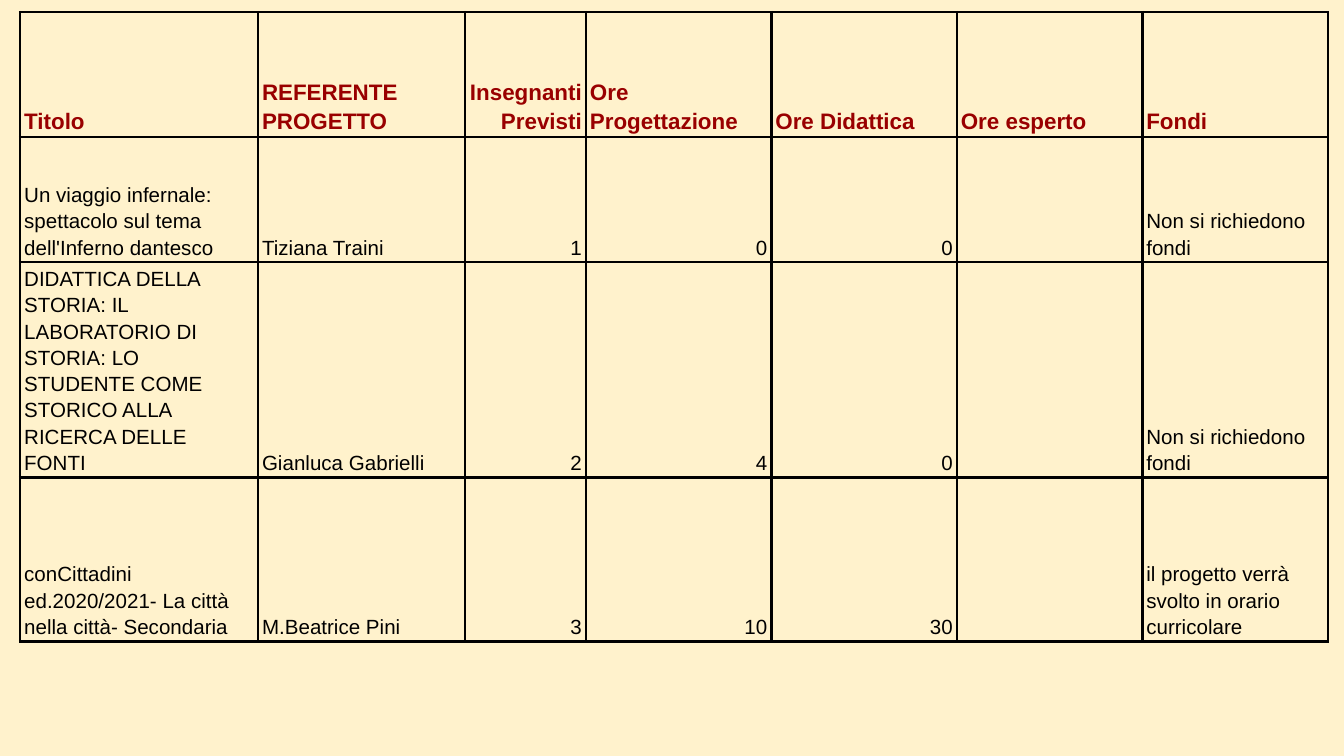
import pptx
import pptx.dml.color
import pptx.enum.text
import pptx.util
from lxml import etree
from pptx.oxml.ns import qn

Inches = pptx.util.Inches
Pt = pptx.util.Pt
ALIGN = pptx.enum.text.PP_ALIGN

# Content
HEADERS = ["Titolo", "REFERENTE PROGETTO", "Insegnanti Previsti",
           "Ore Progettazione", "Ore Didattica", "Ore esperto", "Fondi"]
PROJECTS = [
    ["Un viaggio infernale: spettacolo sul tema dell'Inferno dantesco",
     "Tiziana Traini", "1", "0", "0", "", "Non si richiedono fondi"],
    ["DIDATTICA DELLA STORIA: IL LABORATORIO DI STORIA: LO STUDENTE COME "
     "STORICO ALLA RICERCA DELLE FONTI",
     "Gianluca Gabrielli", "2", "4", "0", "", "Non si richiedono fondi"],
    ["conCittadini ed.2020/2021- La città nella città- Secondaria",
     "M.Beatrice Pini", "3", "10", "30", "",
     "il progetto verrà svolto in orario curricolare"],
]
RIGHT_ALIGNED_HEADER = "Insegnanti Previsti"

# Layout and style
SLIDE_WIDTH = 10
SLIDE_HEIGHT = SLIDE_WIDTH * 9 / 16
LEFT, TOP = 0.15, 0.09
COLUMN_WIDTHS = [1.77, 1.54, 0.9] + [1.38] * 4
ROW_HEIGHTS = [0.93, 0.93, 1.49, 1.22]
BACKGROUND, HEADER_COLOR, BLACK = "FFF2CC", "990000", "000000"


def rgb(color):
    return pptx.dml.color.RGBColor.from_string(color)


def add_borders(cell, color, width):
    properties = cell._tc.get_or_add_tcPr()
    for side in ("a:lnL", "a:lnR", "a:lnT", "a:lnB"):
        line = etree.SubElement(properties, qn(side), w=str(Pt(width)))
        fill = etree.SubElement(line, qn("a:solidFill"))
        etree.SubElement(fill, qn("a:srgbClr"), val=color)


def fill_cell(cell, text, is_header):
    add_borders(cell, BLACK, 1.5)
    cell.fill.background()
    cell.margin_left = cell.margin_right = Inches(0.03)
    cell.margin_top = cell.margin_bottom = Inches(0.02)
    cell.vertical_anchor = pptx.enum.text.MSO_ANCHOR.BOTTOM
    cell.text = text
    paragraph = cell.text_frame.paragraphs[0]
    paragraph.line_spacing = 1.15
    align_right = text.isdigit() or text == RIGHT_ALIGNED_HEADER
    paragraph.alignment = ALIGN.RIGHT if align_right else ALIGN.LEFT
    font = paragraph.font
    font.name = "Arial"
    font.size = Pt(12 if is_header else 11)
    font.bold = is_header
    font.color.rgb = rgb(HEADER_COLOR if is_header else BLACK)


def main():
    presentation = pptx.Presentation()
    presentation.slide_width = Inches(SLIDE_WIDTH)
    presentation.slide_height = Inches(SLIDE_HEIGHT)
    slide = presentation.slides.add_slide(presentation.slide_layouts[6])
    slide.background.fill.solid()
    slide.background.fill.fore_color.rgb = rgb(BACKGROUND)

    # Project table
    rows = [HEADERS] + PROJECTS
    table = slide.shapes.add_table(
        len(rows), len(HEADERS), Inches(LEFT), Inches(TOP),
        Inches(sum(COLUMN_WIDTHS)), Inches(sum(ROW_HEIGHTS))).table
    table.horz_banding = False
    for column, width in zip(table.columns, COLUMN_WIDTHS):
        column.width = Inches(width)
    for row, height in zip(table.rows, ROW_HEIGHTS):
        row.height = Inches(height)
    for row_index, texts in enumerate(rows):
        for column_index, text in enumerate(texts):
            fill_cell(table.cell(row_index, column_index), text, row_index == 0)

    presentation.save("out.pptx")


if __name__ == "__main__":
    main()
